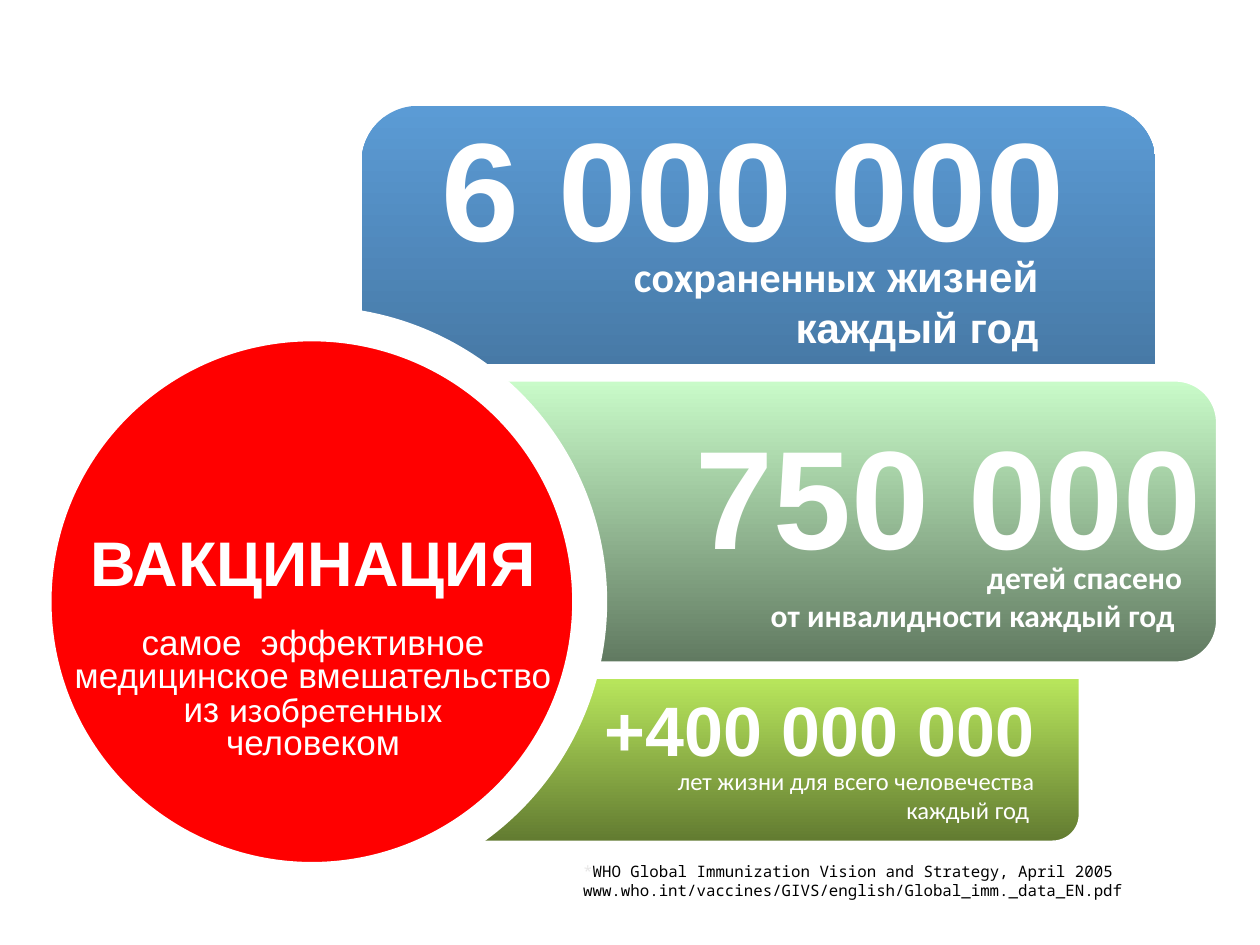
from lxml.etree import SubElement
from pptx import Presentation
from pptx.dml.color import RGBColor
from pptx.enum.shapes import MSO_SHAPE
from pptx.enum.text import PP_ALIGN
from pptx.oxml.ns import qn
from pptx.util import Inches, Pt

# Grid of 100 columns by 75 rows; every box is (column, row, columns, rows).
SLIDE_WIDTH, SLIDE_HEIGHT = Inches(10), Inches(7.5)
COLUMN, ROW = SLIDE_WIDTH / 100, SLIDE_HEIGHT / 75

WHITE = RGBColor(0xFF, 0xFF, 0xFF)
BLACK = RGBColor(0, 0, 0)
PALE_GRAY = RGBColor(0xE7, 0xE6, 0xE6)
RED = RGBColor(0xFF, 0, 0)
BLUE = RGBColor(0x5B, 0x9B, 0xD5), RGBColor(0x41, 0x6F, 0x98)
GREEN = RGBColor(0xCC, 0xFF, 0xCC), RGBColor(0x5E, 0x76, 0x5E)
LIME = RGBColor(0xCC, 0xFF, 0x66), RGBColor(0x5E, 0x76, 0x2F)


def to_lengths(box):
    left, top, width, height = box
    return [round(value) for value in
            (left * COLUMN, top * ROW, width * COLUMN, height * ROW)]


def inside(box, offset):
    """Turn a box measured from another box's corner into a slide box."""
    return box[0] + offset[0], box[1] + offset[1], offset[2], offset[3]


def font_format(size, name="Arial", bold=False, color=WHITE):
    return {"size": Pt(size), "name": name, "bold": bold, "color": color}


def add_outlined_shape(slide, kind, box, outline):
    shape = slide.shapes.add_shape(kind, *to_lengths(box))
    shape.shadow.inherit = False
    if outline:
        shape.line.color.rgb = WHITE
        shape.line.width = Pt(outline)
    else:
        shape.line.fill.background()
    return shape


def add_run(paragraph, text, formats):
    """Add text in one format, with a line break at each newline."""
    for index, line in enumerate(text.split("\n")):
        if index:
            paragraph.add_line_break()
        if line:
            run = paragraph.add_run()
            run.text = line
            for key, value in formats.items():
                if key == "color":
                    run.font.color.rgb = value
                else:
                    setattr(run.font, key, value)


def set_half_line_before(paragraph):
    properties = paragraph._p.get_or_add_pPr()
    spacing = SubElement(properties, qn("a:spcBef"))
    SubElement(spacing, qn("a:spcPct")).set("val", "50000")


def add_text(slide, box, alignment, paragraphs, line_spacing=None):
    """Fill a text box; each paragraph is a list of (text, formats)."""
    frame = slide.shapes.add_textbox(*to_lengths(box)).text_frame
    frame.word_wrap = True
    for index, runs in enumerate(paragraphs):
        paragraph = frame.add_paragraph() if index else frame.paragraphs[0]
        paragraph.alignment = alignment
        if line_spacing:
            paragraph.line_spacing = line_spacing
        else:
            set_half_line_before(paragraph)
        for text, formats in runs:
            add_run(paragraph, text, formats)
    return frame


def add_band(slide, box, colors, outline, texts):
    """Draw a gradient band with texts of (offset, alignment, runs)."""
    shape = add_outlined_shape(slide, MSO_SHAPE.ROUNDED_RECTANGLE, box, outline)
    shape.fill.gradient()
    shape.fill.gradient_angle = 270
    for stop, position, color in zip(shape.fill.gradient_stops, (0, 1), colors):
        stop.position = position
        stop.color.rgb = color
    for offset, alignment, runs in texts:
        add_text(slide, inside(box, offset), alignment, [runs])


def add_circle(slide, box):
    circle = add_outlined_shape(slide, MSO_SHAPE.OVAL, box, 20)
    circle.fill.solid()
    circle.fill.fore_color.rgb = RED
    body = font_format(20)
    frame = add_text(
        slide, inside(box, (-7, 16.5, 58.3, 18.9)), PP_ALIGN.CENTER,
        [[("ВАКЦИНАЦИЯ", font_format(36, bold=True))],
         [("самое  эффективное\nмедицинское вмешательство\nиз ", body),
          ("изобретенных\n", font_format(20, "Calibri")),
          ("человеком", body)]],
        line_spacing=0.8)
    frame.paragraphs[1].space_before = Pt(17)


def add_source(slide, box):
    mono = "Noto Sans Mono"
    add_text(slide, box, PP_ALIGN.LEFT, [[
        ("*", font_format(9, mono, color=PALE_GRAY)),
        ("WHO Global Immunization Vision and Strategy, April 2005\n"
         "www.who.int/vaccines/GIVS/english/Global_imm._data_EN.pdf",
         font_format(9, mono, color=BLACK))]])


def main():
    presentation = Presentation()
    presentation.slide_width = SLIDE_WIDTH
    presentation.slide_height = SLIDE_HEIGHT
    slide = presentation.slides.add_slide(presentation.slide_layouts[6])
    huge = font_format(80, bold=True)

    add_band(slide, (26.4, 50.9, 59.9, 16.5), LIME, 10, [
        ((13.4, 3.1, 43.3, 7.7), PP_ALIGN.RIGHT,
         [("+400 000 000", font_format(40, bold=True))]),
        ((0, 9.4, 56.7, 5.7), PP_ALIGN.RIGHT,
         [("лет жизни для всего человечества\nкаждый год ",
           font_format(14, "Calibri"))])])
    add_band(slide, (28.7, 8.4, 63, 26.8), BLUE, None, [
        ((-6.3, -0.8, 74.8, 14.3), PP_ALIGN.CENTER, [("6 000 000", huge)]),
        ((-4.7, 11, 59.4, 9.1), PP_ALIGN.RIGHT,
         [("сохраненных", font_format(24, "Calibri", True)),
          (" жизней\nкаждый год", font_format(24, bold=True))])])
    add_band(slide, (35, 29.6, 62.2, 23.6), GREEN, 10, [
        ((13.8, 2.4, 47.6, 14.3), PP_ALIGN.RIGHT, [("750 000", huge)]),
        ((6.3, 14.2, 53.5, 7), PP_ALIGN.RIGHT,
         [("детей спасено\nот инвалидности каждый год ",
           font_format(18, "Calibri", True))])])
    add_circle(slide, (2.7, 25.7, 44.1, 44.1))
    add_source(slide, (45.3, 67.9, 55.3, 4))
    presentation.save("out.pptx")


if __name__ == "__main__":
    main()
